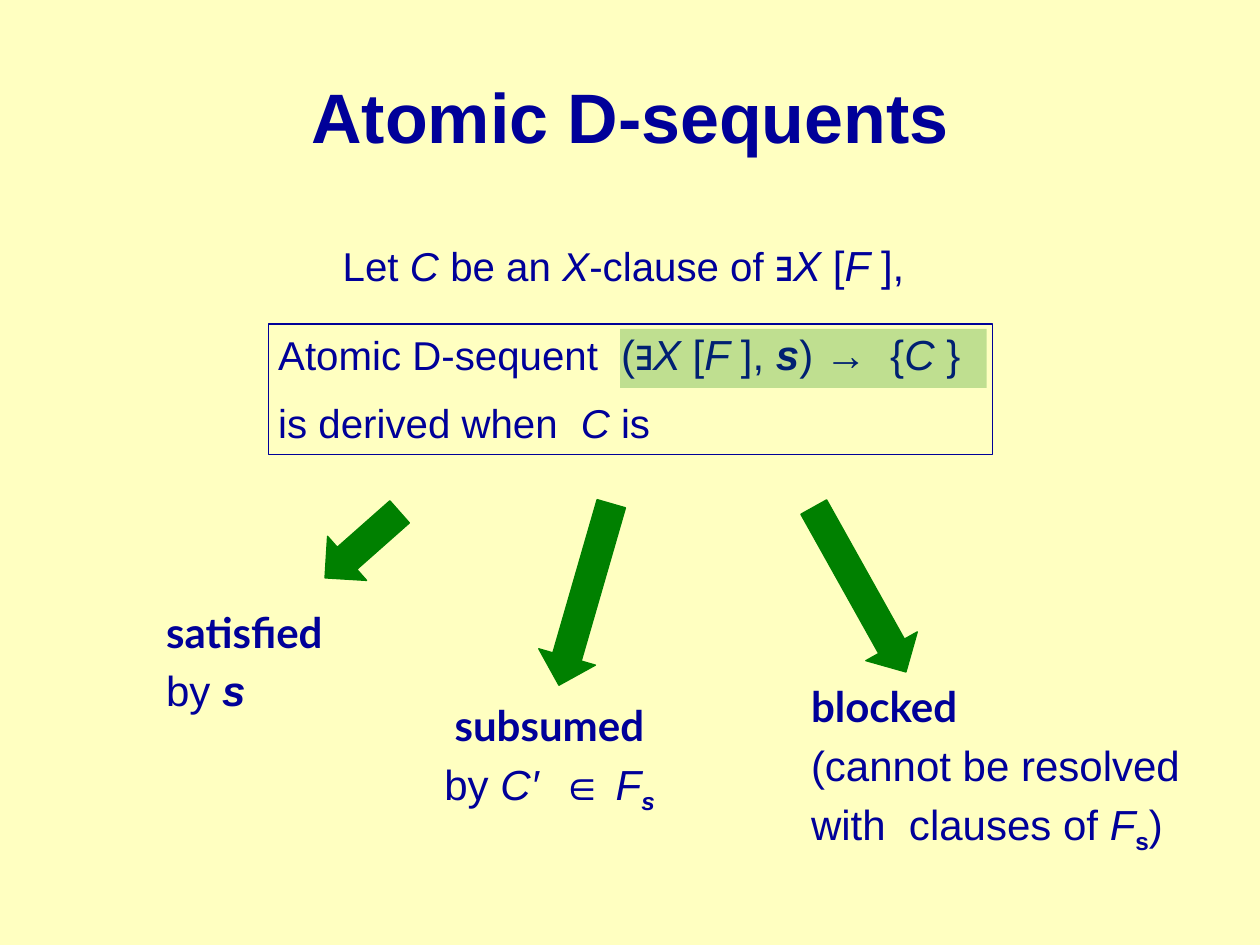
from lxml import etree
from pptx import Presentation
from pptx.dml.color import RGBColor
from pptx.enum import shapes, text
from pptx.oxml.ns import qn
from pptx.util import Cm, Pt

NAVY = RGBColor(0x00, 0x00, 0x99)
GREEN = RGBColor(0x00, 0x80, 0x00)
CREAM = RGBColor(0xFF, 0xFF, 0xC1)

PLAIN = {"name": "Arial", "size": Pt(24), "bold": False, "italic": False}
SMALL = {"size": Pt(23)}
ITALIC = {"italic": True}
SMALL_ITALIC = {**SMALL, **ITALIC}
BOLD = {"bold": True}
BOLD_ITALIC = {**BOLD, **ITALIC}
HEADING = {"name": "Lato", "bold": True}

FORMULA = [("∃", {}), ("X ", ITALIC), ("[", {}), ("F ", ITALIC)]
INTRO = [[("Let ", SMALL), ("C", SMALL_ITALIC), (" be an ", SMALL), ("X", SMALL_ITALIC),
          ("-clause of ", SMALL), *FORMULA, ("], ", {})]]
RULE = [
    [("Atomic D-sequent  ", SMALL), ("(", {}), *FORMULA, ("], ", {}), ("s", BOLD_ITALIC),
     (") →  {", {}), ("C ", ITALIC), ("} ", {})],
    [("is derived when  ", SMALL), ("C", SMALL_ITALIC), (" is ", SMALL)],
]

# Each case: text box, hanging indent, lines, arrow box, arrow rotation
CASES = [
    ((3.1, 12.09, 4.6, 2.51), 0,
     [[("satisfied ", HEADING)], [("by ", {}), ("s", BOLD_ITALIC)]],
     (6.71, 9.98, 1.19, 2.01), 48.5),
    ((8.71, 13.97, 5.41, 2.51), 0,
     [[(" subsumed ", HEADING)],
      [("by ", {}), ("C′", ITALIC), ("  ∈ ", {}), ("F", ITALIC),
       ("s", {**BOLD_ITALIC, "subscript": True})]],
     (11.2, 10.08, 1.19, 3.81), 16.1),
    ((16.1, 13.59, 8.2, 3.73), 1.27,
     [[("blocked ", HEADING)], [("(cannot be resolved", {})],
      [("with  clauses of ", {}), ("F", ITALIC), ("s", {**BOLD, "subscript": True}), (")", {})]],
     (16.74, 9.98, 1.19, 3.81), 330.8),
]


def lengths(box):
    return [Cm(value) for value in box]


def format_span(span, style):
    for name, value in {**PLAIN, **style}.items():
        if name == "subscript":
            span.font._element.set("baseline", "-25000")
        else:
            setattr(span.font, name, value)
    span.font.color.rgb = NAVY


def space_before_percent(para, percent):
    spacing = etree.Element(qn("a:spcBef"))
    etree.SubElement(spacing, qn("a:spcPct")).set("val", str(percent * 1000))
    para._p.get_or_add_pPr().insert(0, spacing)


def write_lines(shape, lines, margins=(0.25, 0.13), hanging=0, space_after=None):
    frame = shape.text_frame
    across, down = lengths(margins)
    settings = {"word_wrap": True, "vertical_anchor": text.MSO_ANCHOR.TOP,
                "margin_left": across, "margin_right": across,
                "margin_top": down, "margin_bottom": down}
    for name, value in settings.items():
        setattr(frame, name, value)
    for number, line in enumerate(lines):
        para = frame.add_paragraph() if number else frame.paragraphs[0]
        para.alignment = text.PP_ALIGN.JUSTIFY
        if space_after:
            para.space_after = space_after
        space_before_percent(para, 20)
        if hanging:
            properties = para._p.get_or_add_pPr()
            properties.set("marL", str(Cm(hanging)))
            properties.set("indent", str(-Cm(hanging)))
        for words, style in line:
            span = para.add_run()
            span.text = words
            format_span(span, style)


def add_text(page, box, lines, **layout):
    write_lines(page.shapes.add_textbox(*lengths(box)), lines, **layout)


def add_plain_shape(page, kind, box, fill=None, line=None):
    shape = page.shapes.add_shape(kind, *lengths(box))
    shape.shadow.inherit = False
    if fill is None:
        shape.fill.background()
    else:
        shape.fill.solid()
        shape.fill.fore_color.rgb = fill
    if line is None:
        shape.line.fill.background()
    else:
        shape.line.color.rgb = line
        shape.line.width = Pt(0.75)
    return shape


def set_title(page, box, words):
    title = page.shapes.title
    title.left, title.top, title.width, title.height = lengths(box)
    title.text_frame.vertical_anchor = text.MSO_ANCHOR.MIDDLE
    para = title.text_frame.paragraphs[0]
    para.alignment = text.PP_ALIGN.CENTER
    span = para.add_run()
    span.text = words
    format_span(span, {"size": Pt(40), **BOLD})


def add_rule(page, box):
    """Framed statement with a translucent highlight over its formula."""
    left, top, width, _ = box
    frame = add_plain_shape(page, shapes.MSO_SHAPE.RECTANGLE, box, line=NAVY)
    write_lines(frame, RULE, margins=(0.2, 0.1), space_after=Pt(6))
    highlight = add_plain_shape(page, shapes.MSO_SHAPE.RECTANGLE,
                                (left + 7.09, top + 0.1, width - 7.21, 1.19), fill=GREEN)
    colour = highlight.fill._xPr.find(".//" + qn("a:srgbClr"))
    etree.SubElement(colour, qn("a:alpha")).set("val", "25000")


def add_case(page, box, hanging, lines, arrow_box, rotation):
    add_text(page, box, lines, hanging=hanging)
    arrow = add_plain_shape(page, shapes.MSO_SHAPE.DOWN_ARROW, arrow_box, GREEN, GREEN)
    arrow.rotation = rotation


def main():
    deck = Presentation()
    deck.slide_width, deck.slide_height = Cm(25.4), Cm(19.05)
    page = deck.slides.add_slide(deck.slide_layouts[5])
    page.background.fill.solid()
    page.background.fill.fore_color.rgb = CREAM
    set_title(page, (1.9, 0.74, 21.6, 3.18), "Atomic D-sequents")
    add_text(page, (6.71, 4.72, 11.99, 1.24), INTRO, margins=(0.2, 0.1))
    add_rule(page, (5.41, 6.53, 14.6, 2.64))
    for case in CASES:
        add_case(page, *case)
    deck.save("out.pptx")


if __name__ == "__main__":
    main()
